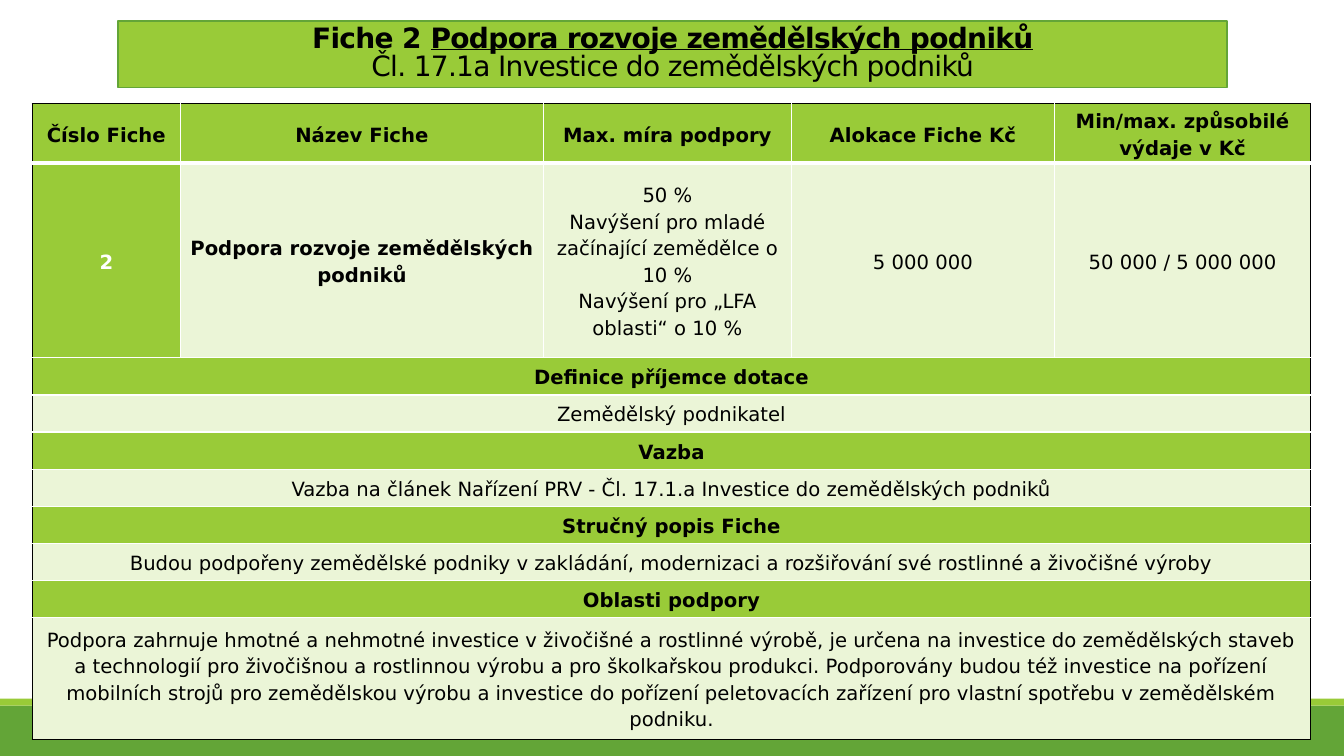
from dataclasses import dataclass

from lxml import etree
from pptx import Presentation
from pptx import util as u
from pptx.dml.color import RGBColor
from pptx.enum import shapes, text
from pptx.oxml.ns import qn


@dataclass(frozen=True)
class Theme:
    """Colours, font and type sizes of the slide."""
    lime: str = "99CB38"
    green: str = "63A537"
    pale: str = "EBF5D7"
    black: str = "000000"
    white: str = "FFFFFF"
    font: str = "DejaVu Sans"
    head: int = 20
    body: int = 14


class Deck:
    """Holds the theme and the current slide; lengths are percent of its size."""

    def __init__(self, theme):
        self.theme = theme
        self.show = Presentation()
        self.show.slide_width = u.Inches(13.33)
        self.show.slide_height = u.Inches(7.5)
        self.slide = self.show.slides.add_slide(self.show.slide_layouts[5])

    def wide(self, share):
        return int(self.show.slide_width * share / 100)

    def high(self, share):
        return int(self.show.slide_height * share / 100)

    def place(self, x, y, w, h):
        return self.wide(x), self.high(y), self.wide(w), self.high(h)

    def paint(self, item, color):
        item.fill.solid()
        item.fill.fore_color.rgb = RGBColor.from_string(color)

    def style(self, para, size, color, bold, space):
        para.alignment = text.PP_ALIGN.CENTER
        para.line_spacing = space
        font = para.font
        font.name, font.size, font.bold = self.theme.font, u.Pt(size), bold
        font.color.rgb = RGBColor.from_string(color)

    def band(self, y, h, color):
        bar = self.slide.shapes.add_shape(
            shapes.MSO_SHAPE.RECTANGLE, *self.place(0, y, 100, h))
        bar.shadow.inherit = False
        self.paint(bar, color)
        bar.line.fill.background()

    def title(self, box, lines):
        head = self.slide.shapes.title
        head.left, head.top, head.width, head.height = self.place(*box)
        self.paint(head, self.theme.lime)
        head.line.color.rgb = RGBColor.from_string(self.theme.green)
        head.line.width = u.Pt(1.25)
        frame = head.text_frame
        frame.auto_size = text.MSO_AUTO_SIZE.NONE
        frame.vertical_anchor = text.MSO_ANCHOR.BOTTOM
        para = frame.paragraphs[0]
        self.style(para, self.theme.head, self.theme.black, False, 0.85)
        for index, line in enumerate(lines):
            if index:
                para.add_line_break()
            for words, bold, under in line:
                run = para.add_run()
                run.text = words
                run.font.bold, run.font.underline = bold, under
                run.font._element.set("spc", "-50")

    def edge(self, cell, side, color, width):
        line = etree.SubElement(
            cell._tc.get_or_add_tcPr(), qn(f"a:ln{side}"), w=str(u.Pt(width)))
        fill = etree.SubElement(line, qn("a:solidFill"))
        etree.SubElement(fill, qn("a:srgbClr"), val=color)

    def frame(self, cell, left, right, top, low):
        black, white = self.theme.black, self.theme.white
        for side, outer in zip("LRTB", (left, right, top, low)):
            width = 3 if top and side == "B" else 1
            self.edge(cell, side, black if outer else white, width)

    def label(self, cell, words, fill, color, bold):
        self.paint(cell, fill)
        cell.vertical_anchor = text.MSO_ANCHOR.MIDDLE
        cell.margin_left = cell.margin_right = u.Inches(0.07)
        cell.margin_top = cell.margin_bottom = 0
        cell.text = words
        for para in cell.text_frame.paragraphs:
            self.style(para, self.theme.body, color, bold, 1.15)

    def table(self, x, y, cols, rows, cells):
        box = self.place(x, y, sum(cols), sum(rows))
        grid = self.slide.shapes.add_table(len(rows), len(cols), *box).table
        grid.first_row = grid.horz_banding = False
        for col, share in zip(grid.columns, cols):
            col.width = self.wide(share)
        for row, share in zip(grid.rows, rows):
            row.height = self.high(share)
        end, last = len(cols) - 1, len(rows) - 1
        for r, line in enumerate(cells):
            whole = len(line) == 1
            if whole:
                grid.cell(r, 0).merge(grid.cell(r, end))
            for c in range(len(cols)):
                self.frame(grid.cell(r, c), whole or c == 0,
                           whole or c == end, r == 0, r == last)
            for c, (words, fill, color, bold) in enumerate(line):
                self.label(grid.cell(r, c), words, fill, color, bold)


def main():
    theme = Theme()
    deck = Deck(theme)
    deck.band(93.33, 6.67, theme.green)
    deck.band(92.4, 0.93, theme.lime)
    deck.title((8.78, 2.8, 82.52, 8.8), [
        [("Fiche 2 ", True, False),
         ("Podpora rozvoje zemědělských podniků", True, True)],
        [("Čl. 17.1a Investice do zemědělských podniků", False, False)],
    ])

    def key(words, color=theme.black):
        return words, theme.lime, color, True

    def value(words, bold=False):
        return words, theme.pale, theme.black, bold

    heads = ["Číslo Fiche", "Název Fiche", "Max. míra podpory",
             "Alokace Fiche Kč", "Min/max. způsobilé výdaje v Kč"]
    rates = ("50 %\nNavýšení pro mladé začínající zemědělce o 10 %\n"
             "Navýšení pro „LFA oblasti“ o 10 %")
    facts = [key("2", theme.white),
             value("Podpora rozvoje zemědělských podniků", True),
             value(rates), value("5 000 000"),
             value("50 000 / 5 000 000")]
    parts = {
        "Definice příjemce dotace": "Zemědělský podnikatel",
        "Vazba": "Vazba na článek Nařízení PRV - Čl. 17.1.a Investice do "
                 "zemědělských podniků",
        "Stručný popis Fiche":
            "Budou podpořeny zemědělské podniky v zakládání, modernizaci a "
            "rozšiřování své rostlinné a živočišné výroby",
        "Oblasti podpory":
            "Podpora zahrnuje hmotné a nehmotné investice v živočišné a "
            "rostlinné výrobě, je určena na investice do zemědělských staveb "
            "a technologií pro živočišnou a rostlinnou výrobu a pro "
            "školkařskou produkci. Podporovány budou též investice na "
            "pořízení mobilních strojů pro zemědělskou výrobu a investice do "
            "pořízení peletovacích zařízení pro vlastní spotřebu v "
            "zemědělském podniku.",
    }
    cells = [[key(head) for head in heads], facts]
    for head, body in parts.items():
        cells += [[key(head)], [value(body)]]
    deck.table(2.4, 13.73, [11.03, 27.01, 18.45, 19.58, 19.06],
               [7.87, 25.73] + [4.91] * 7 + [16.13], cells)
    deck.show.save("out.pptx")


if __name__ == "__main__":
    main()
